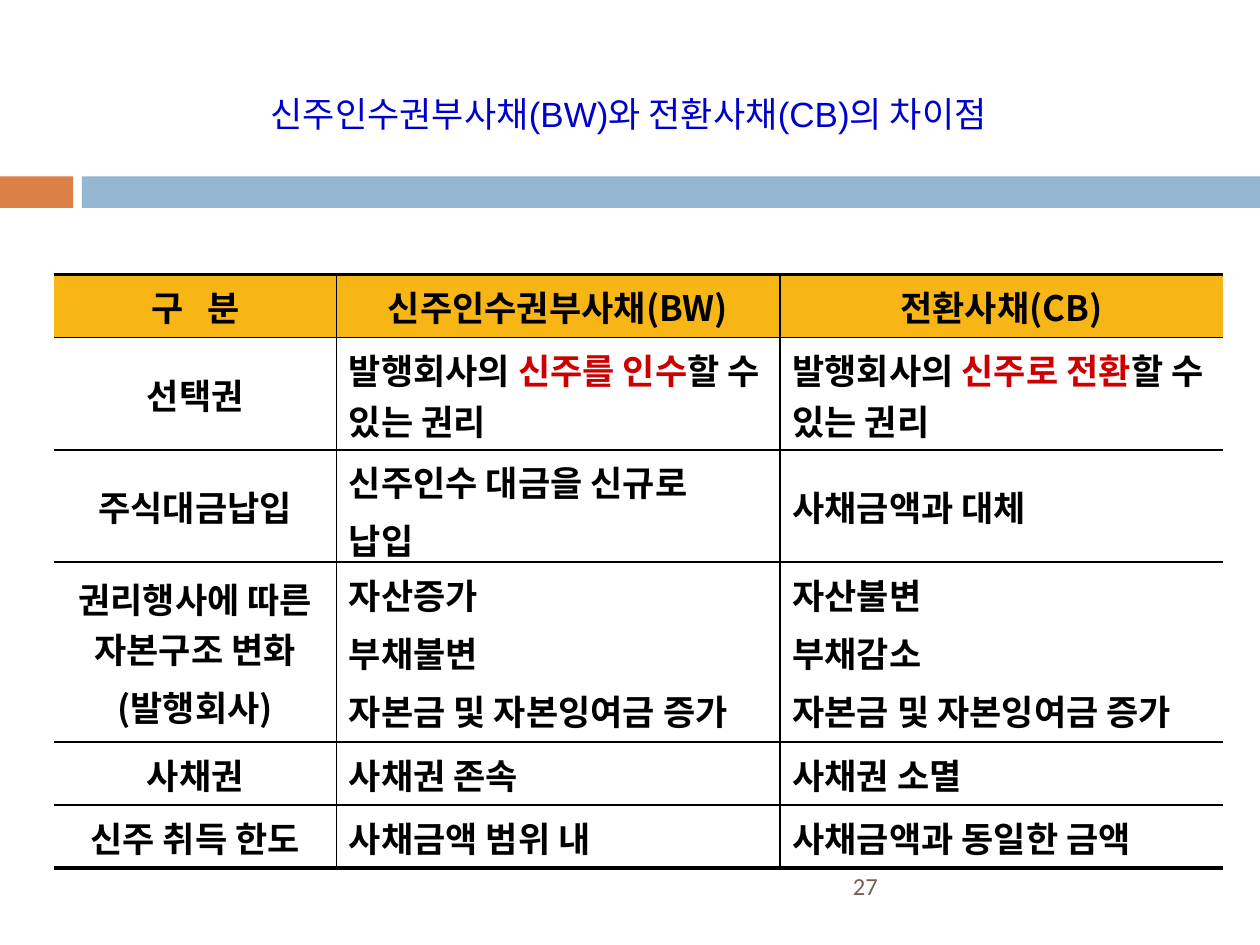
from lxml import etree
from pptx import Presentation
from pptx import util as u
from pptx.dml.color import RGBColor
from pptx.enum import shapes, text
from pptx.oxml import ns

BLACK = RGBColor(0x00, 0x00, 0x00)
WHITE = RGBColor(0xFF, 0xFF, 0xFF)
RED = RGBColor(0xCC, 0x00, 0x00)
BLUE = RGBColor(0x00, 0x00, 0xCC)
BROWN = RGBColor(0x77, 0x5F, 0x55)
ORANGE = RGBColor(0xDD, 0x80, 0x47)
SKY = RGBColor(0x94, 0xB6, 0xD2)
GOLD = RGBColor(0xF7, 0xB6, 0x15)
KOREAN = "Noto Sans CJK KR"

TITLE = [("신주인수권부사채", KOREAN), ("(BW)", "Arial"), ("와 전환사채", KOREAN),
         ("(CB)", "Arial"), ("의 차이점", KOREAN)]
BANDS = [(0, 0.58, ORANGE), (0.65, 9.35, SKY)]
COLUMNS = [2.24, 3.52, 3.52]
HEIGHTS = [0.5, 0.89, 0.89, 1.43, 0.5, 0.5]
ROWS = [
    [["구   분"], ["신주인수권부사채(BW)"], ["전환사채(CB)"]],
    [["선택권"],
     [["발행회사의 ", ("신주를 인수", RED), "할 수 있는 권리"]],
     [["발행회사의 ", ("신주로 전환", RED), "할 수 있는 권리"]]],
    [["주식대금납입"], ["신주인수 대금을 신규로", "납입"], ["사채금액과 대체"]],
    [["권리행사에 따른 자본구조 변화", "(발행회사)"],
     ["자산증가", "부채불변", "자본금 및 자본잉여금 증가"],
     ["자산불변", "부채감소", "자본금 및 자본잉여금 증가"]],
    [["사채권"], ["사채권 존속"], ["사채권 소멸"]],
    [["신주 취득 한도"], ["사채금액 범위 내"], ["사채금액과 동일한 금액"]],
]


def write(para, words, font=KOREAN, size=20, color=BLACK, bold=False):
    span = para.add_run()
    span.text = words
    span.font.name = font
    span.font.size = u.Pt(size)
    span.font.bold = bold
    span.font.color.rgb = color
    east = etree.SubElement(span.font._element, ns.qn("a:ea"))
    east.set("typeface", font)


def draw_border(cell, side, width):
    line = etree.SubElement(cell._tc.get_or_add_tcPr(), ns.qn(f"a:ln{side}"))
    line.set("w", str(u.Pt(width)))
    if width:
        fill = etree.SubElement(line, ns.qn("a:solidFill"))
        etree.SubElement(fill, ns.qn("a:srgbClr")).set("val", str(BLACK))
    else:
        etree.SubElement(line, ns.qn("a:noFill"))


def fill_cell(cell, lines, row, column):
    last_row, last_column = len(ROWS) - 1, len(COLUMNS) - 1
    draw_border(cell, "L", 1 if column else 0)
    draw_border(cell, "R", 1 if column < last_column else 0)
    draw_border(cell, "T", 1 if row else 2.25)
    draw_border(cell, "B", 1 if row < last_row else 2.25)
    cell.fill.solid()
    cell.fill.fore_color.rgb = WHITE if row else GOLD
    cell.vertical_anchor = text.MSO_ANCHOR.MIDDLE
    centred = row == 0 or column == 0
    for index, line in enumerate(lines):
        frame = cell.text_frame
        para = frame.add_paragraph() if index else frame.paragraphs[0]
        para.alignment = text.PP_ALIGN.CENTER if centred else text.PP_ALIGN.LEFT
        para.space_before = u.Pt(4)
        for part in [line] if isinstance(line, str) else line:
            words, color = (part, BLACK) if isinstance(part, str) else part
            write(para, words, color=color, bold=True)


def add_box(page, left, top, width, height):
    box = page.shapes.add_textbox(*map(u.Inches, (left, top, width, height)))
    box.text_frame.word_wrap = True
    return box.text_frame


def main():
    deck = Presentation()
    deck.slide_width, deck.slide_height = u.Inches(10), u.Inches(7.5)
    page = deck.slides.add_slide(deck.slide_layouts[6])

    for left, width, color in BANDS:
        band = page.shapes.add_shape(shapes.MSO_SHAPE.RECTANGLE, u.Inches(left),
                                     u.Inches(1.4), u.Inches(width), u.Inches(0.25))
        band.shadow.inherit = False
        band.fill.solid()
        band.fill.fore_color.rgb = color
        band.line.fill.background()

    number = add_box(page, 6.67, 6.83, 2.92, 0.4)
    number.vertical_anchor = text.MSO_ANCHOR.MIDDLE
    write(number.paragraphs[0], "27", font="Calibri", size=14, color=BROWN)

    table = page.shapes.add_table(len(ROWS), len(COLUMNS), u.Inches(0.43), u.Inches(2.18),
                                  u.Inches(sum(COLUMNS)), u.Inches(sum(HEIGHTS))).table
    for column, width in enumerate(COLUMNS):
        table.columns[column].width = u.Inches(width)
    for row, height in enumerate(HEIGHTS):
        table.rows[row].height = u.Inches(height)
        for column, lines in enumerate(ROWS[row]):
            fill_cell(table.cell(row, column), lines, row, column)

    title = add_box(page, 0.42, 0.75, 9.14, 0.36).paragraphs[0]
    title.alignment = text.PP_ALIGN.CENTER
    title.line_spacing = 0.8
    title.space_before = u.Pt(4)
    for words, font in TITLE:
        write(title, words, font=font, color=BLUE)

    deck.save("out.pptx")


if __name__ == "__main__":
    main()
